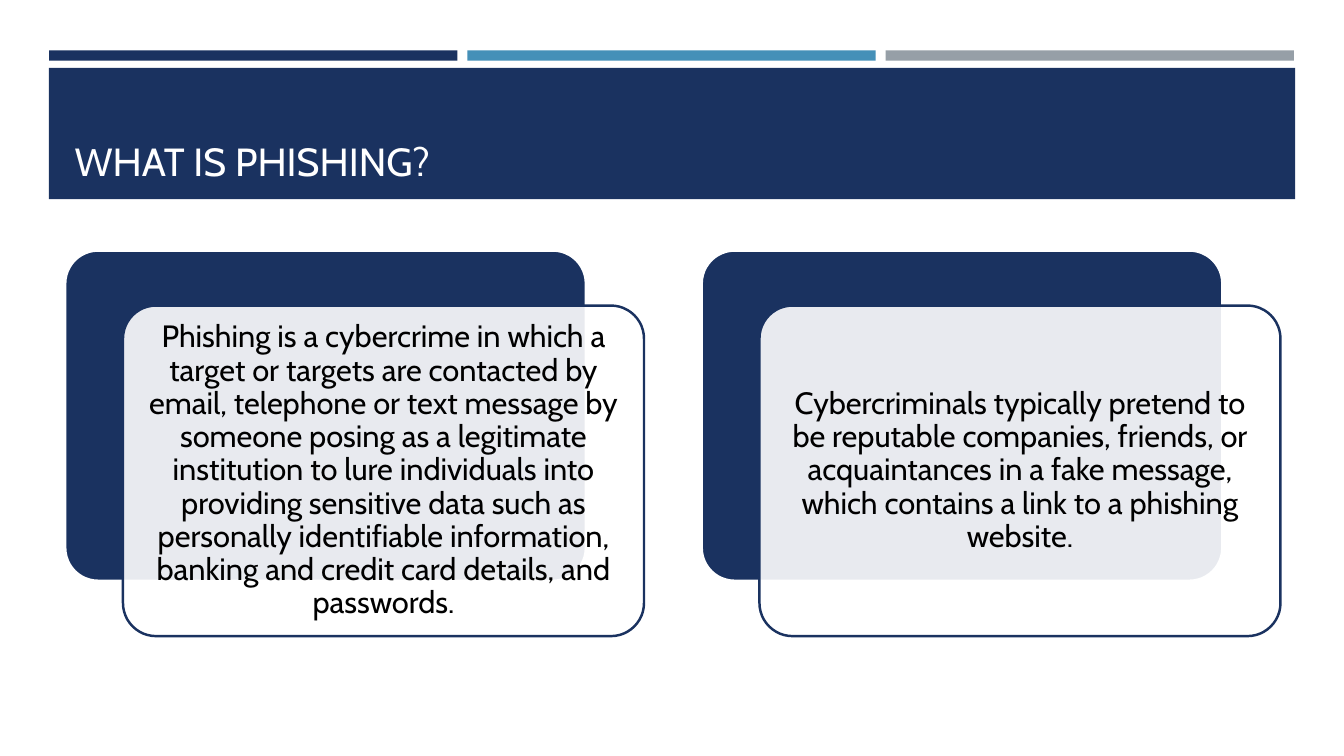
from lxml.etree import SubElement
from pptx import Presentation
from pptx.dml.color import RGBColor
from pptx.enum.shapes import MSO_SHAPE as Preset
from pptx.enum.text import MSO_ANCHOR as Anchor, PP_ALIGN as Align
from pptx.oxml.ns import qn
from pptx.util import Cm, Pt

NAVY, BLUE, GREY = "1A3260", "4590B8", "969FA7"
WHITE, BLACK = "FFFFFF", "000000"

CARD_TEXTS = [
    "Phishing is a cybercrime in which a target or targets are contacted by "
    "email, telephone or text message by someone posing as a legitimate "
    "institution to lure individuals into providing sensitive data such as "
    "personally identifiable information, banking and credit card details, "
    "and passwords.",
    "Cybercriminals typically pretend to be reputable companies, friends, or "
    "acquaintances in a fake message, which contains a link to a phishing "
    "website.",
]


def color(hex_code):
    return RGBColor.from_string(hex_code)


class SlideBuilder:
    font = "Cabin"
    corner = 0.1
    card_size = (13.13, 8.33)
    front_shift = (1.46, 1.39)
    text_margin = 0.24

    def __init__(self, slide):
        self.shapes = slide.shapes

    def block(self, box, fill, preset=Preset.RECTANGLE, outline=None, opacity=None):
        """Add a filled shape; outline is (colour, points), opacity a percentage."""
        block = self.shapes.add_shape(preset, *map(Cm, box))
        block.shadow.inherit = False
        block.fill.solid()
        block.fill.fore_color.rgb = color(fill)
        if opacity is not None:
            tint = block.fill._xPr.find(".//" + qn("a:srgbClr"))
            SubElement(tint, qn("a:alpha"), val=str(opacity * 1000))
        if outline:
            block.line.color.rgb = color(outline[0])
            block.line.width = Pt(outline[1])
        else:
            block.line.fill.background()
        if preset == Preset.ROUNDED_RECTANGLE:
            block.adjustments[0] = self.corner

    def text(self, box, words, size, ink, frame_format, paragraph_format):
        frame = self.shapes.add_textbox(*map(Cm, box)).text_frame
        paragraph = frame.paragraphs[0]
        run = paragraph.add_run()
        run.text = words
        run.font.color.rgb = color(ink)
        formats = [
            (frame, {"word_wrap": True, **frame_format}),
            (paragraph, paragraph_format),
            (run.font, {"name": self.font, "size": Pt(size)}),
        ]
        for target, values in formats:
            for name, value in values.items():
                setattr(target, name, value)

    def card(self, left, top, words):
        """Add a navy panel with a translucent text panel shifted over it."""
        width, height = self.card_size
        rounded = Preset.ROUNDED_RECTANGLE
        self.block((left, top, width, height), NAVY, rounded, (WHITE, 2))
        front_left, front_top = left + self.front_shift[0], top + self.front_shift[1]
        self.block((front_left, front_top, width, height), WHITE, rounded,
                   (NAVY, 1.75), opacity=90)
        margin = self.text_margin
        inner = (front_left + margin, front_top + margin,
                 width - 2 * margin, height - 2 * margin)
        insets = {f"margin_{side}": Cm(margin)
                  for side in ("left", "top", "right", "bottom")}
        self.text(inner, words, 22, BLACK,
                  {"vertical_anchor": Anchor.MIDDLE, **insets},
                  {"alignment": Align.CENTER, "line_spacing": 0.9})


def main():
    deck = Presentation()
    deck.slide_width, deck.slide_height = Cm(33.87), Cm(19.05)
    builder = SlideBuilder(deck.slides.add_slide(deck.slide_layouts[6]))

    for column, accent in enumerate((NAVY, BLUE, GREY)):
        builder.block((1.24 + 10.54 * column, 1.27, 10.29, 0.26), accent)

    builder.block((1.23, 1.71, 31.41, 3.31), NAVY)
    builder.text((1.63, 1.96, 30.63, 2.82), "WHAT IS PHISHING?", 28, WHITE,
                 {"vertical_anchor": Anchor.BOTTOM}, {"alignment": Align.LEFT})

    for column, words in enumerate(CARD_TEXTS):
        builder.card(1.64 + 16.04 * column, 6.31, words)

    deck.save("out.pptx")


if __name__ == "__main__":
    main()
